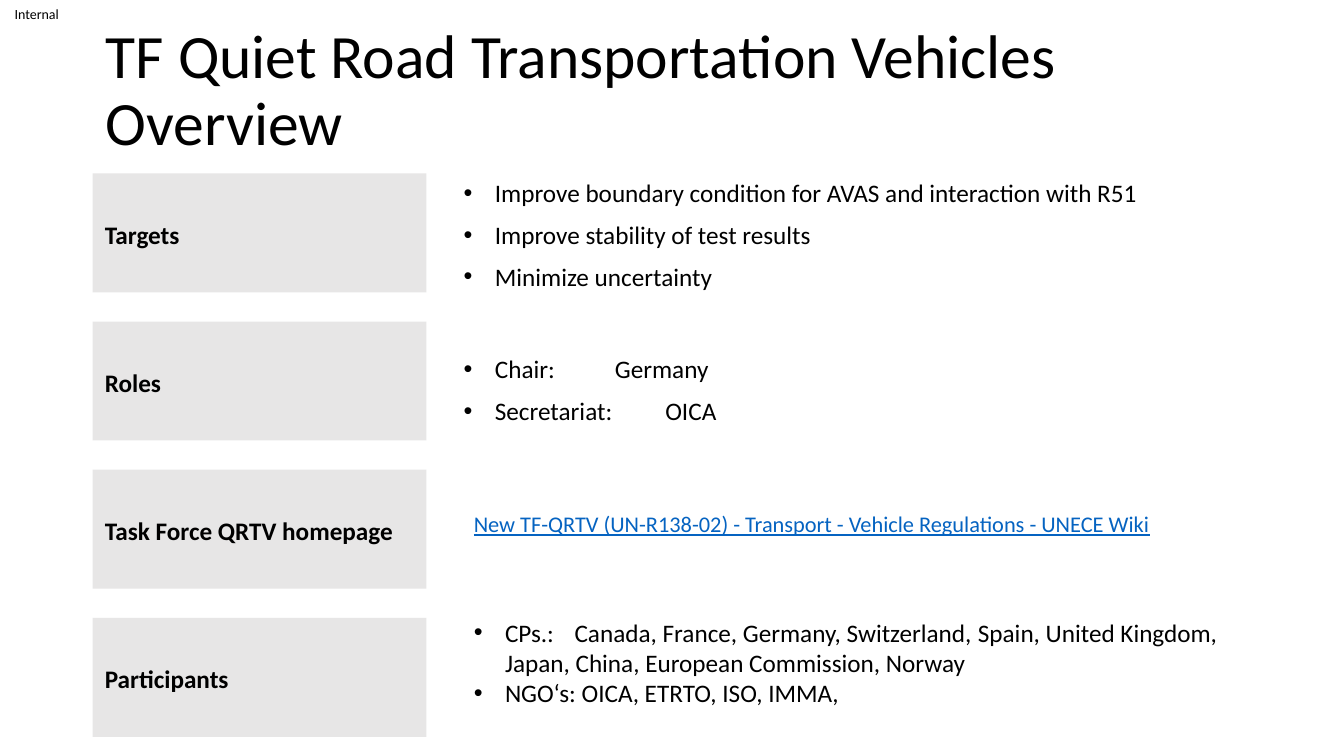
from pptx import Presentation
from pptx.dml.color import RGBColor
from pptx.enum.shapes import MSO_SHAPE
from pptx.enum.text import MSO_ANCHOR, MSO_AUTO_SIZE, PP_ALIGN
from pptx.oxml.ns import qn
from pptx.util import Inches, Pt
from lxml.etree import SubElement

BLACK = RGBColor(0x00, 0x00, 0x00)
LABEL_GREY = RGBColor(0xE7, 0xE6, 0xE6)
LINK_BLUE = RGBColor(0x05, 0x63, 0xC1)

SLIDE_WIDTH, SLIDE_HEIGHT = Inches(13.33), Inches(7.5)
COLUMN, ROW = SLIDE_WIDTH / 160, SLIDE_HEIGHT / 90

# Topic rows in grid cells: left, top, width, height and the step between rows
TOPIC_BOX = (11.04, 20.64, 133.2, 14.16)
TOPIC_STEP = 17.64
LABEL_WIDTH = 39.72
CONTENT_OFFSET = 44.16

NO_MARGINS = (0, 0, 0, 0)
LABEL_MARGINS = (0.12, 0.08, 0.12, 0.08)
TEXT_MARGINS = (0.1, 0.05, 0.1, 0.05)
SPACED = {"line_spacing": 1.1, "space_before": Pt(6)}
TIGHT = {"line_spacing": 1.0, "space_before": Pt(0)}
SPACED_LIST = {"margins": NO_MARGINS, "anchor": MSO_ANCHOR.MIDDLE,
               "spacing": SPACED, "bulleted": True}

# Each content box: shift down from its row, width, height
TOPICS = [
    ("Targets", (-1.44, 89.16, 17.04),
     ["Improve boundary condition for AVAS and interaction with R51",
      "Improve stability of test results",
      "Minimize uncertainty"], SPACED_LIST),
    ("Roles", (-0.6, 81.36, 17.04),
     ["Chair: \t\tGermany", "Secretariat: \tOICA"], SPACED_LIST),
    ("Task Force QRTV homepage", (4.2, 84.72, 4.44),
     ["New TF-QRTV (UN-R138-02) - Transport - Vehicle Regulations - UNECE Wiki"],
     {"size": 16, "color": LINK_BLUE, "underline": True}),
    ("Participants", (-0.72, 94.08, 12.12),
     ["CPs.:\tCanada, France, Germany, Switzerland, \tSpain, United Kingdom, "
      "Japan, China, European Commission, Norway",
      "NGO‘s: OICA, ETRTO, ISO, IMMA,"], {"bulleted": True}),
]


def set_all(target, values):
    for name, value in values.items():
        setattr(target, name, value)


def to_lengths(box):
    """Turn left, top, width, height in grid cells into slide lengths."""
    return [round(cells * unit) for cells, unit in zip(box, (COLUMN, ROW) * 2)]


def place(shape, box):
    set_all(shape, dict(zip(("left", "top", "width", "height"), to_lengths(box))))


def set_bullet(paragraph, bulleted):
    properties = paragraph._p.get_or_add_pPr()
    indent = Inches(0.31) if bulleted else 0
    properties.set("marL", str(indent))
    properties.set("indent", str(-indent))
    if bulleted:
        SubElement(properties, qn("a:buFont")).set("typeface", "Arial")
        SubElement(properties, qn("a:buChar")).set("char", "•")
    else:
        SubElement(properties, qn("a:buNone"))


def write(shape, lines, size=18, color=BLACK, bold=False, underline=False,
          margins=TEXT_MARGINS, anchor=MSO_ANCHOR.TOP, spacing=TIGHT,
          align=PP_ALIGN.LEFT, bulleted=False):
    frame = shape.text_frame
    set_all(frame, {"word_wrap": True, "auto_size": MSO_AUTO_SIZE.NONE,
                    "vertical_anchor": anchor})
    sides = ("margin_left", "margin_top", "margin_right", "margin_bottom")
    set_all(frame, dict(zip(sides, map(Inches, margins))))
    frame.text = "\n".join(lines)
    for paragraph in frame.paragraphs:
        set_all(paragraph, {"alignment": align, **spacing})
        set_bullet(paragraph, bulleted)
        for run in paragraph.runs:
            set_all(run.font, {"name": "Calibri", "size": Pt(size),
                               "bold": bold, "underline": underline})
            run.font.color.rgb = color


def add_header(slide, title_box, marking_box):
    place(slide.shapes.title, title_box)
    write(slide.shapes.title, ["TF Quiet Road Transportation Vehicles Overview"],
          size=44, anchor=MSO_ANCHOR.MIDDLE,
          spacing={"line_spacing": 0.9, "space_before": Pt(0)})
    marking = slide.shapes.add_textbox(*to_lengths(marking_box))
    write(marking, ["Internal"], size=10, margins=NO_MARGINS,
          anchor=MSO_ANCHOR.MIDDLE, align=PP_ALIGN.CENTER)


def add_topic(slide, box, body, heading, content_box, lines, style):
    """Put a grey heading at the left of the box and its content beside it."""
    left, top, _, height = box
    label = slide.shapes.add_shape(
        MSO_SHAPE.RECTANGLE, *to_lengths((left, top, LABEL_WIDTH, height)))
    label.shadow.inherit = False
    label.fill.solid()
    label.fill.fore_color.rgb = LABEL_GREY
    label.line.fill.background()
    write(label, [heading], bold=True, margins=LABEL_MARGINS,
          anchor=MSO_ANCHOR.MIDDLE, spacing=SPACED)

    shift, content_width, content_height = content_box
    place(body, (left + CONTENT_OFFSET, top + shift, content_width, content_height))
    write(body, lines, **style)


def main():
    presentation = Presentation()
    set_all(presentation, {"slide_width": SLIDE_WIDTH, "slide_height": SLIDE_HEIGHT})
    comparison_layout = presentation.slide_layouts[4]
    slide = presentation.slides.add_slide(comparison_layout)
    add_header(slide, (11.4, 2.28, 138, 17.4), (0, 0, 8.76, 3.36))
    bodies = list(slide.placeholders)[1:]
    left, top, width, height = TOPIC_BOX
    for index, (body, topic) in enumerate(zip(bodies, TOPICS)):
        add_topic(slide, (left, top + index * TOPIC_STEP, width, height), body, *topic)
    presentation.save("out.pptx")


if __name__ == "__main__":
    main()
